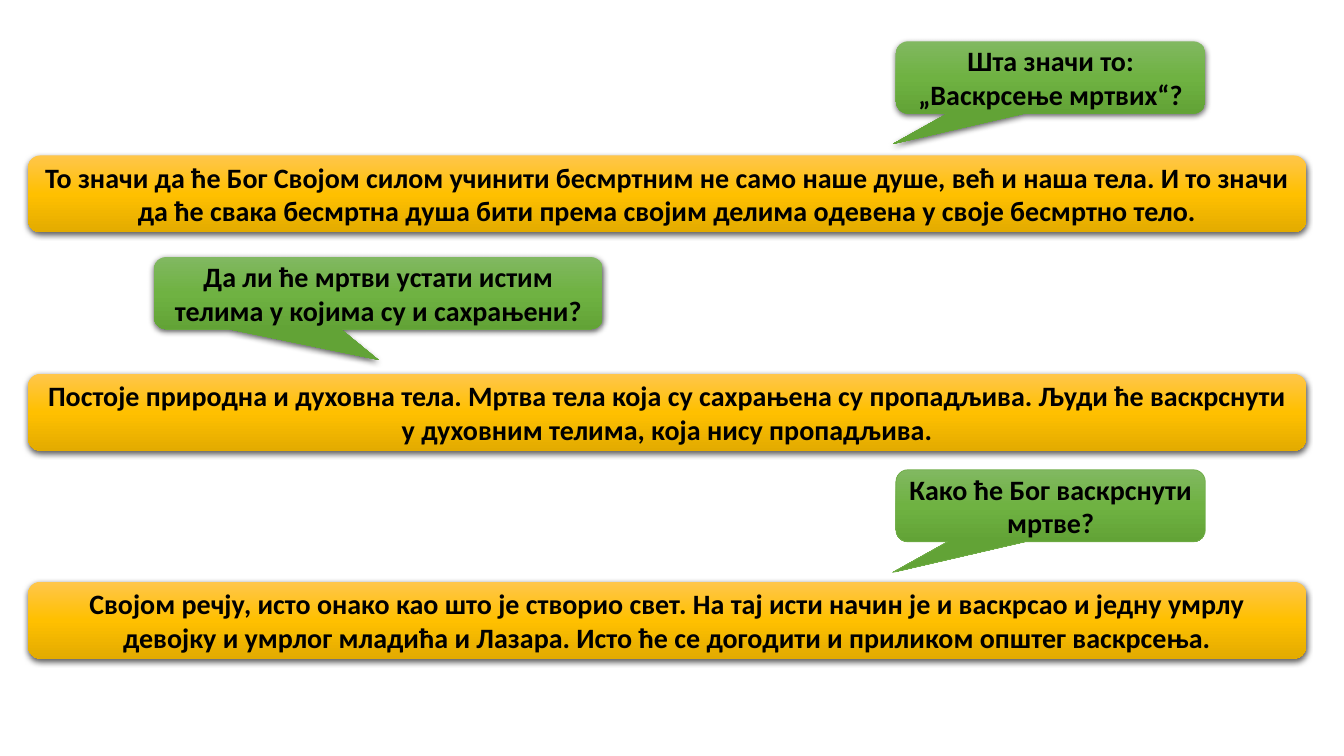
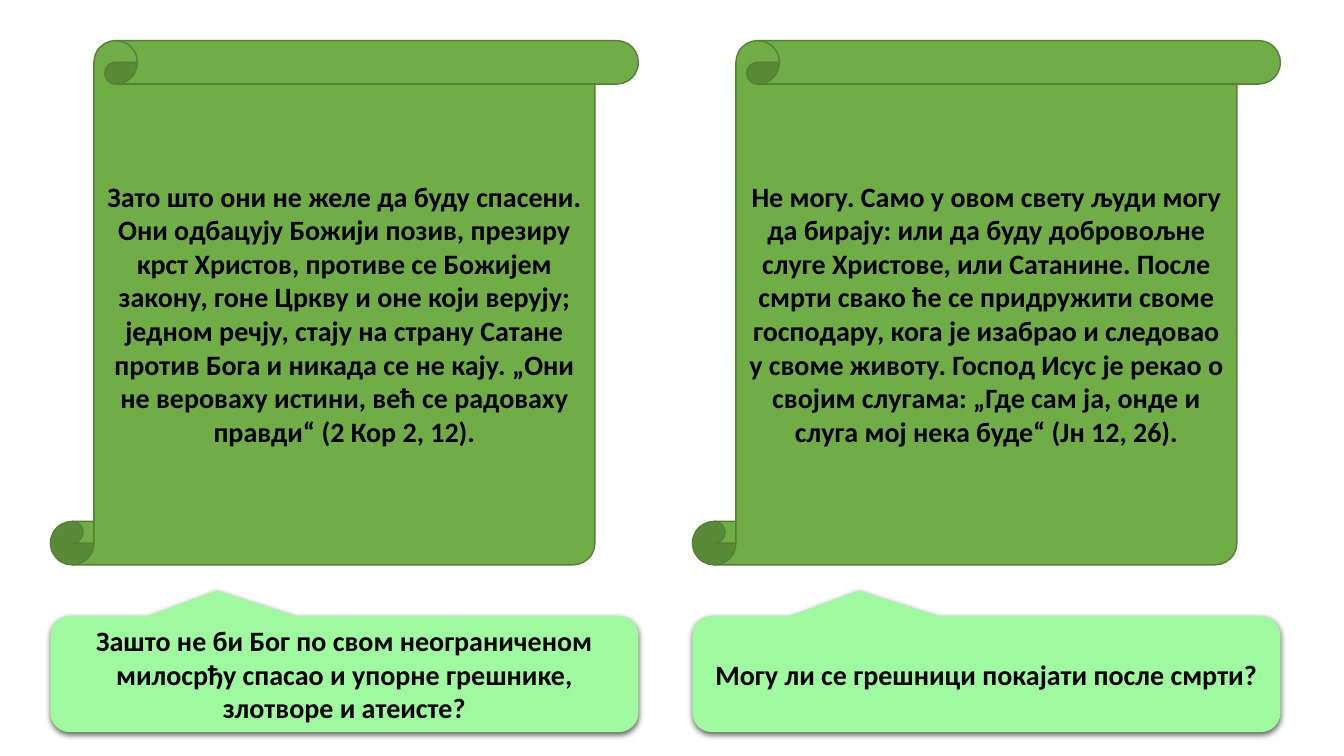
from copy import deepcopy

from lxml.etree import SubElement
from pptx import Presentation
from pptx.dml.color import RGBColor
from pptx.enum.shapes import MSO_SHAPE as Preset
from pptx.enum.text import MSO_ANCHOR as Anchor, PP_ALIGN as Align
from pptx.oxml.ns import qn
from pptx.util import Pt

FONT = "Calibri"
TEXT_SIZE = 20
BLACK = "000000"
MINT = "9FF99F"
GREEN = "70AD47"
DARK_GREEN = "538035"
GREEN_GRADIENT = ("81B861", "6FB242", "62A336")
GOLD_GRADIENT = ("FFC64B", "FFC000", "E3AB00")
LEFT_TAIL = (-0.511, 0.925)
MIDDLE_TAIL = (0, 0.925)
TOP_TAIL = (-0.217, -0.718)
CORNER = 0.167

DIALOGUE = [
    (640, 29.5, 221, LEFT_TAIL, None, "Шта значи то: „Васкрсење мртвих“?",
     111, "То значи да ће Бог Својом силом учинити бесмртним не само наше душе, "
     "већ и наша тела. И то значи да ће свака бесмртна душа бити према својим "
     "делима одевена у своје бесмртно тело."),
    (110, 183.6, 320.5, MIDDLE_TAIL, None,
     "Да ли ће мртви устати истим телима у којима су и сахрањени?",
     267, "Постоје природна и духовна тела. Мртва тела која су сахрањена су "
     "пропадљива. Људи ће васкрснути у духовним телима, која нису пропадљива."),
    (640, 335.5, 221, LEFT_TAIL, (GREEN, 0.5), "Како ће Бог васкрснути мртве?",
     415.5, "Својом речју, исто онако као што је створио свет. На тај исти начин "
     "је и васкрсао и једну умрлу девојку и умрлог младића и Лазара. Исто ће се "
     "догодити и приликом општег васкрсења."),
]

SCROLLS = [
    ("Зашто не би Бог по свом неограниченом милосрђу спасао и упорне грешнике, "
     "злотворе и атеисте?",
     "Зато што они не желе да буду спасени. Они одбацују Божији позив, презиру "
     "крст Христов, противе се Божијем закону, гоне Цркву и оне који верују; "
     "једном речју, стају на страну Сатане против Бога и никада се не кају. "
     "„Они не вероваху истини, већ се радоваху правди“ (2 Кор 2, 12)."),
    ("Могу ли се грешници покајати после смрти?",
     "Не могу. Само у овом свету људи могу да бирају: или да буду добровољне "
     "слуге Христове, или Сатанине. После смрти свако ће се придружити своме "
     "господару, кога је изабрао и следовао у своме животу. Господ Исус је рекао "
     "о својим слугама: „Где сам ја, онде и слуга мој нека буде“ (Јн 12, 26)."),
]


def color(value):
    return RGBColor.from_string(value)


class Deck:
    def __init__(self):
        self.presentation = Presentation()
        self.presentation.slide_width = Pt(960)
        self.presentation.slide_height = Pt(540)
        self.slide = None

    def new_slide(self):
        blank = self.presentation.slide_layouts.get_by_name("Blank")
        self.slide = self.presentation.slides.add_slide(blank)

    def shape(self, preset, box, text, fill, adjustments, line=None):
        shape = self.slide.shapes.add_shape(preset, *(Pt(length) for length in box))
        for index, value in enumerate(adjustments):
            shape.adjustments[index] = value
        self.paint(shape, fill)
        shape.shadow.inherit = False
        if line:
            shape.line.color.rgb = color(line[0])
            shape.line.width = Pt(line[1])
        else:
            shape.line.fill.background()
            self.cast_shadow(shape)
        self.set_text(shape.text_frame, text)

    def paint(self, shape, fill):
        if isinstance(fill, str):
            shape.fill.solid()
            shape.fill.fore_color.rgb = color(fill)
            return
        shape.fill.gradient()
        shape.fill.gradient_angle = 270
        stop_list = shape.element.spPr.find(".//" + qn("a:gsLst"))
        stop_list.insert(1, deepcopy(stop_list[0]))
        for index, stop in enumerate(shape.fill.gradient_stops):
            stop.position = index / 2
            stop.color.rgb = color(fill[index])

    def cast_shadow(self, shape):
        effects = shape.element.spPr.find(qn("a:effectLst"))
        shadow = SubElement(effects, qn("a:outerShdw"), blurRad=str(Pt(4.5)),
                            dist=str(Pt(1.5)), dir="5400000", algn="ctr", rotWithShape="0")
        tint = SubElement(shadow, qn("a:srgbClr"), val=BLACK)
        SubElement(tint, qn("a:alpha"), val="63000")

    def set_text(self, text_frame, text):
        text_frame.word_wrap = True
        text_frame.vertical_anchor = Anchor.MIDDLE
        text_frame.text = text
        paragraph = text_frame.paragraphs[0]
        paragraph.alignment = Align.CENTER
        font = paragraph.runs[0].font
        font.name = FONT
        font.size = Pt(TEXT_SIZE)
        font.bold = True
        font.color.rgb = color(BLACK)

    def callout(self, box, text, fill, tail, line=None):
        self.shape(Preset.ROUNDED_RECTANGULAR_CALLOUT, box, text, fill, (*tail, CORNER), line)

    def answer_band(self, top, text):
        self.shape(Preset.ROUNDED_RECTANGLE, (20, top, 913, 55), text, GOLD_GRADIENT, (CORNER,))

    def scroll(self, box, text):
        self.shape(Preset.VERTICAL_SCROLL, box, text, GREEN, (0.083,), (DARK_GREEN, 1))

    def save(self):
        self.presentation.save("out.pptx")


def main():
    deck = Deck()

    deck.new_slide()
    for left, top, width, tail, line, question, answer_top, answer in DIALOGUE:
        deck.callout((left, top, width, 51.5), question, GREEN_GRADIENT, tail, line)
        deck.answer_band(answer_top, answer)

    deck.new_slide()
    for column, (question, answer) in enumerate(SCROLLS):
        left = 36 + column * 458.6
        deck.callout((left, 440, 420, 83), question, MINT, TOP_TAIL)
        deck.scroll((left, 29, 420, 374.5), answer)

    deck.save()


if __name__ == "__main__":
    main()
